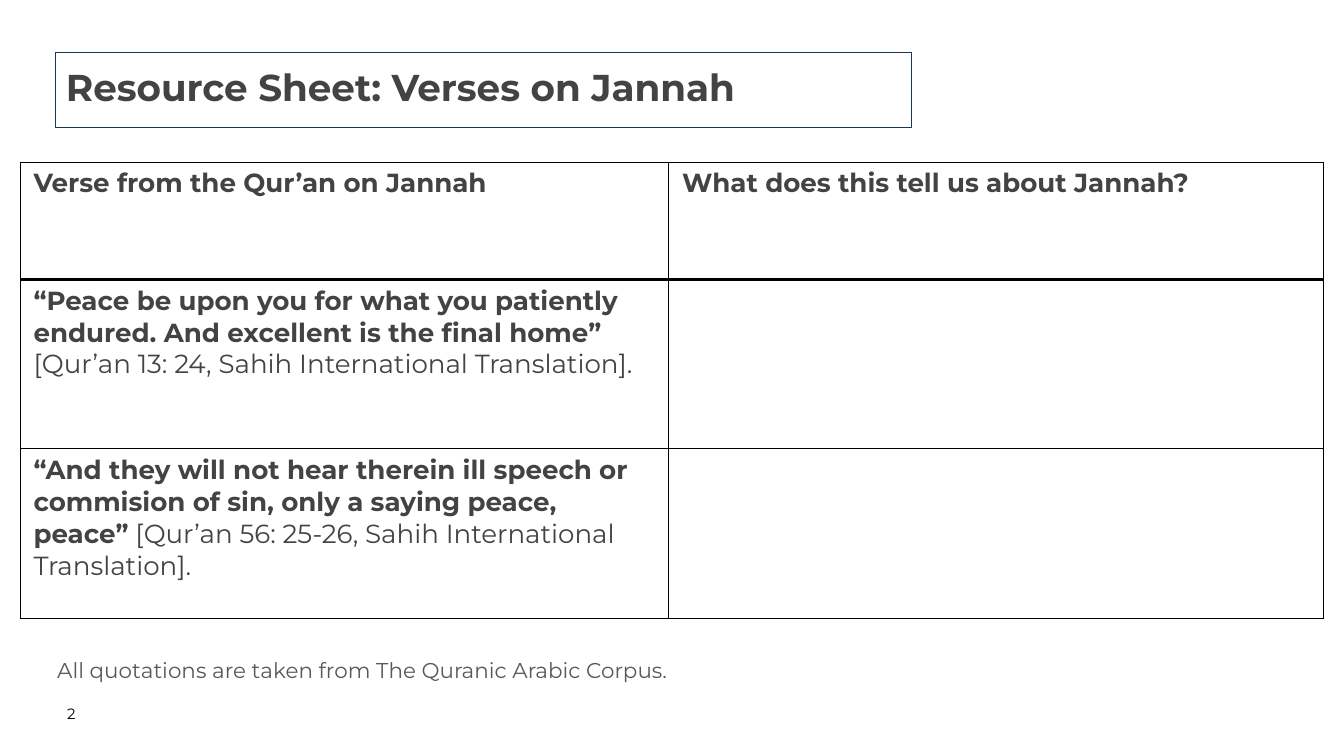
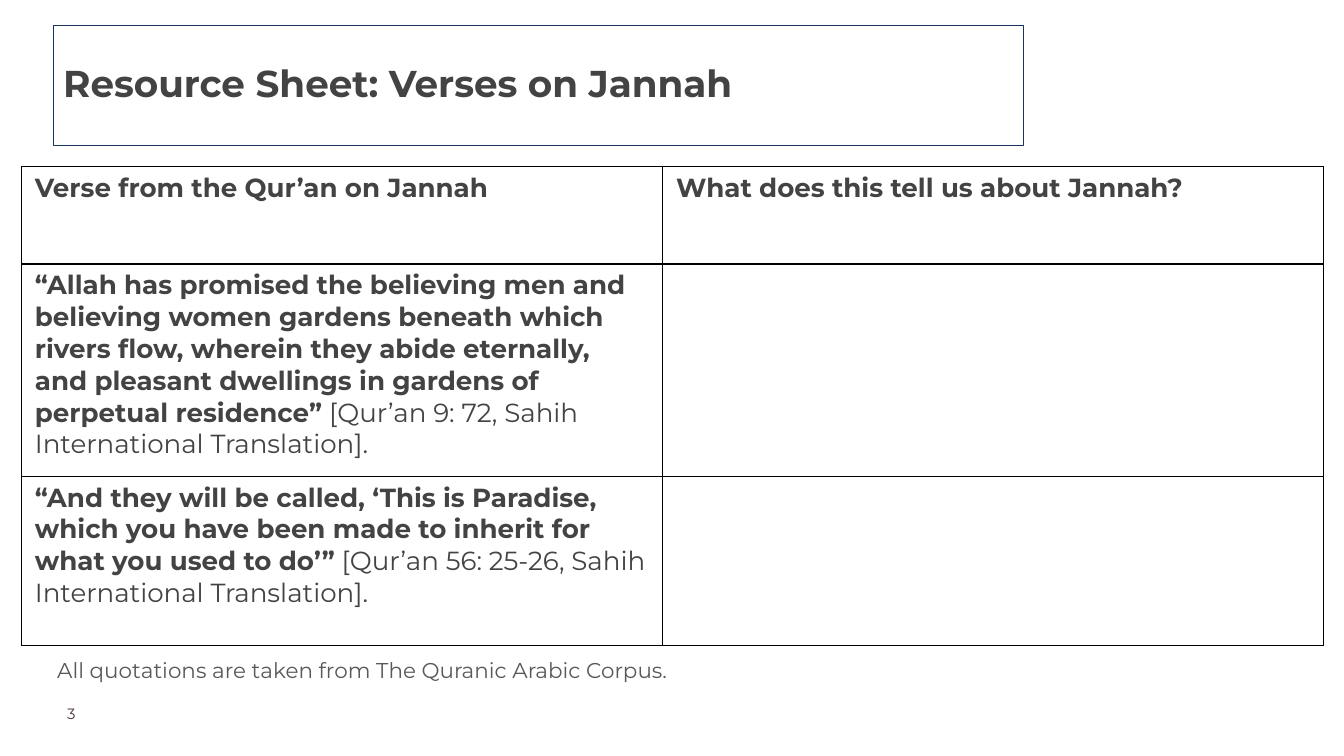
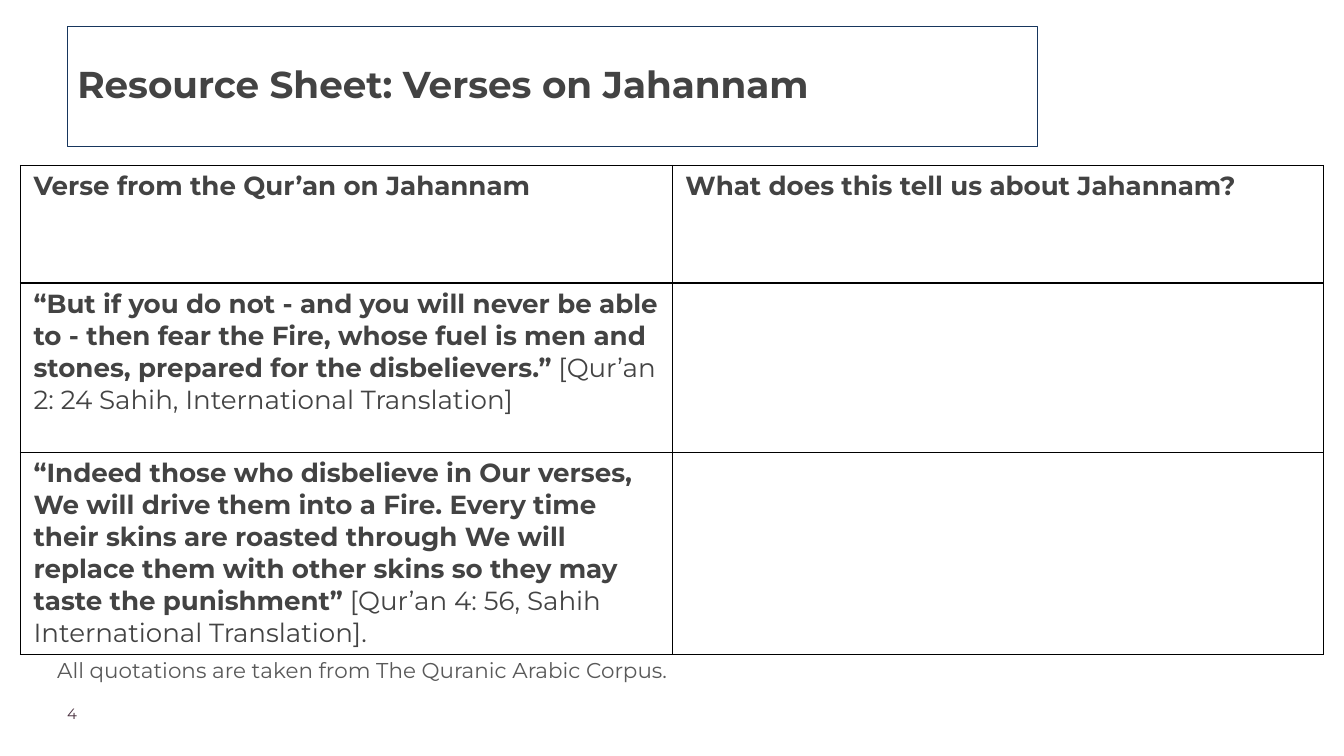
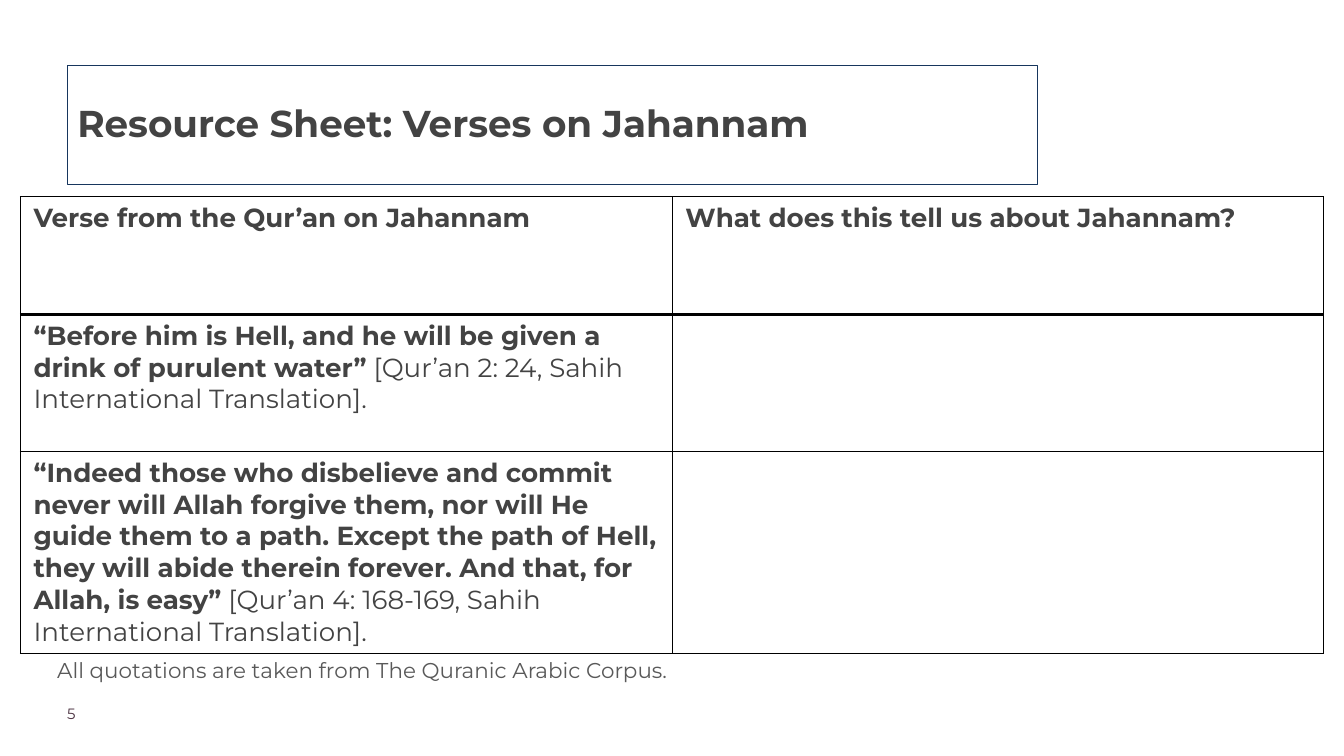
from lxml import etree
from pptx import Presentation
from pptx.dml.color import RGBColor
from pptx.enum import text
from pptx.oxml import ns
from pptx.util import Inches, Pt

FONT = "Montserrat"
INK = "434343"
NAVY = "17365D"
BLACK = "000000"
WHITE = "FFFFFF"
GREY = "595959"
PLUM = "4B3241"
TITLE_ONLY, TITLE_SLIDE = 5, 0
NUMBER_BOX = (1, 10.48, 1.57, 0.39)
CREDIT_BOX = (0.52, 9.67, 9.75, 0.33)

SHEETS = [
    dict(topic="Jannah", layout=TITLE_SLIDE, number_color=BLACK,
         title_box=(0.83, 0.78, 12.73, 1.11), table_at=(0.3, 2.41),
         cols=(9.65, 9.74), rows=(1.75, 2.52, 2.52),
         verses=[("“Peace be upon you for what you patiently endured. "
                  "And excellent is the final home”",
                  " [Qur’an 13: 24, Sahih International Translation]."),
                 ("“And they will not hear therein ill speech or commision of sin, "
                  "only a saying peace, peace”",
                  " [Qur’an 56: 25-26, Sahih International Translation].")]),
    dict(topic="Jannah", layout=TITLE_ONLY, number_color=PLUM,
         title_box=(0.79, 0.38, 14.44, 1.78), table_at=(0.32, 2.48),
         cols=(9.54, 9.84), rows=(1.45, 3.16, 2.52),
         verses=[("“Allah has promised the believing men and believing women gardens "
                  "beneath which rivers flow, wherein they abide eternally, and pleasant "
                  "dwellings in gardens of perpetual residence”",
                  " [Qur’an 9: 72, Sahih International Translation]."),
                 ("“And they will be called, ‘This is Paradise, which you have been made "
                  "to inherit for what you used to do’”",
                  " [Qur’an 56: 25-26, Sahih International Translation].")]),
    dict(topic="Jahannam", layout=TITLE_ONLY, number_color=PLUM,
         title_box=(1, 0.4, 14.44, 1.78), table_at=(0.3, 2.46),
         cols=(9.7, 9.7), rows=(1.75, 2.52, 3),
         verses=[("“But if you do not - and you will never be able to - then fear the "
                  "Fire, whose fuel is men and stones, prepared for the disbelievers.”",
                  " [Qur’an 2: 24 Sahih, International Translation]"),
                 ("“Indeed those who disbelieve in Our verses, We will drive them into a "
                  "Fire. Every time their skins are roasted through We will replace them "
                  "with other skins so they may taste the punishment”",
                  " [Qur’an 4: 56, Sahih International Translation].")]),
    dict(topic="Jahannam", layout=TITLE_ONLY, number_color=PLUM,
         title_box=(1, 0.97, 14.44, 1.78), table_at=(0.3, 2.93),
         cols=(9.7, 9.7), rows=(1.75, 2.04, 3),
         verses=[("“Before him is Hell, and he will be given a drink of purulent water”",
                  " [Qur’an 2: 24, Sahih International Translation]."),
                 ("“Indeed those who disbelieve and commit never will Allah forgive them, "
                  "nor will He guide them to a path. Except the path of Hell, they will "
                  "abide therein forever. And that, for Allah, is easy”",
                  " [Qur’an 4: 168-169, Sahih International Translation].")]),
]


def rgb(color):
    return RGBColor.from_string(color)


def inches(*lengths):
    return [Inches(length) for length in lengths]


def set_font(font, size, color, bold=None):
    font.name, font.size, font.bold = FONT, Pt(size), bold
    font.color.rgb = rgb(color)


def set_margins(target, x, y):
    """Set the inner margins of a text frame or table cell."""
    target.margin_left = target.margin_right = Inches(x)
    target.margin_top = target.margin_bottom = Inches(y)


def add_title(s, box, title):
    sp = s.shapes.title
    sp.left, sp.top, sp.width, sp.height = inches(*box)
    sp.line.color.rgb = rgb(NAVY)
    sp.line.width = Pt(1)
    tf = sp.text_frame
    tf.text = title
    tf.auto_size = text.MSO_AUTO_SIZE.NONE
    tf.vertical_anchor = text.MSO_ANCHOR.MIDDLE
    set_margins(tf, 0.15, 0.07)
    p = tf.paragraphs[0]
    p.alignment = text.PP_ALIGN.LEFT
    p.line_spacing = 0.9
    set_font(p.font, 40, INK, True)


def add_label(s, box, words, size, color):
    tf = s.shapes.add_textbox(*inches(*box)).text_frame
    tf.word_wrap = True
    set_margins(tf, 0, 0)
    p = tf.paragraphs[0]
    p.text = words
    set_font(p.font, size, color)
    return p


def set_borders(cell, **widths):
    """Draw black cell borders; widths gives points for L, R, T and B."""
    tc_pr = cell._tc.get_or_add_tcPr()
    for side, width in widths.items():
        ln = etree.SubElement(tc_pr, ns.qn(f"a:ln{side}"), w=str(Pt(width)))
        fill = etree.SubElement(ln, ns.qn("a:solidFill"))
        etree.SubElement(fill, ns.qn("a:srgbClr"), val=BLACK)


def fill_cell(cell, bold_words, plain_words=""):
    set_margins(cell, 0.2, 0.08)
    p = cell.text_frame.paragraphs[0]
    set_font(p.font, 28, INK, True)
    for words, bold in ((bold_words, True), (plain_words, False)):
        if words:
            r = p.add_run()
            r.text = words
            r.font.bold = bold


def add_verse_table(s, at, cols, rows, topic, verses):
    size = inches(sum(cols), sum(rows))
    table = s.shapes.add_table(len(rows), len(cols), *inches(*at), *size).table
    table.first_row = table.horz_banding = False
    for column, width in zip(table.columns, cols):
        column.width = Inches(width)
    for i, height in enumerate(rows):
        table.rows[i].height = Inches(height)
        for cell in table.rows[i].cells:
            set_borders(cell, L=1, R=1, T=3 if i == 1 else 1, B=3 if i == 0 else 1)
            cell.fill.solid()
            cell.fill.fore_color.rgb = rgb(WHITE)
    fill_cell(table.cell(0, 0), f"Verse from the Qur’an on {topic}")
    fill_cell(table.cell(0, 1), f"What does this tell us about {topic}?")
    for i, (verse, reference) in enumerate(verses, 1):
        fill_cell(table.cell(i, 0), verse, reference)


def add_footer(s, number, number_color):
    add_label(s, NUMBER_BOX, str(number), 16, number_color)
    p = add_label(s, CREDIT_BOX,
                  "All quotations are taken from The Quranic Arabic Corpus.", 23, GREY)
    p.alignment = text.PP_ALIGN.CENTER
    p.line_spacing = 1.3


def add_resource_sheet(prs, number, sheet):
    s = prs.slides.add_slide(prs.slide_layouts[sheet["layout"]])
    for sp in list(s.placeholders):
        if sp.placeholder_format.idx != 0:
            sp.element.getparent().remove(sp.element)
    add_title(s, sheet["title_box"], f"Resource Sheet: Verses on {sheet['topic']}")
    add_verse_table(s, sheet["table_at"], sheet["cols"], sheet["rows"],
                    sheet["topic"], sheet["verses"])
    add_footer(s, number, sheet["number_color"])


def main():
    prs = Presentation()
    prs.slide_width, prs.slide_height = inches(20, 11.25)
    for number, sheet in enumerate(SHEETS, 2):
        add_resource_sheet(prs, number, sheet)
    prs.save("out.pptx")


if __name__ == "__main__":
    main()
